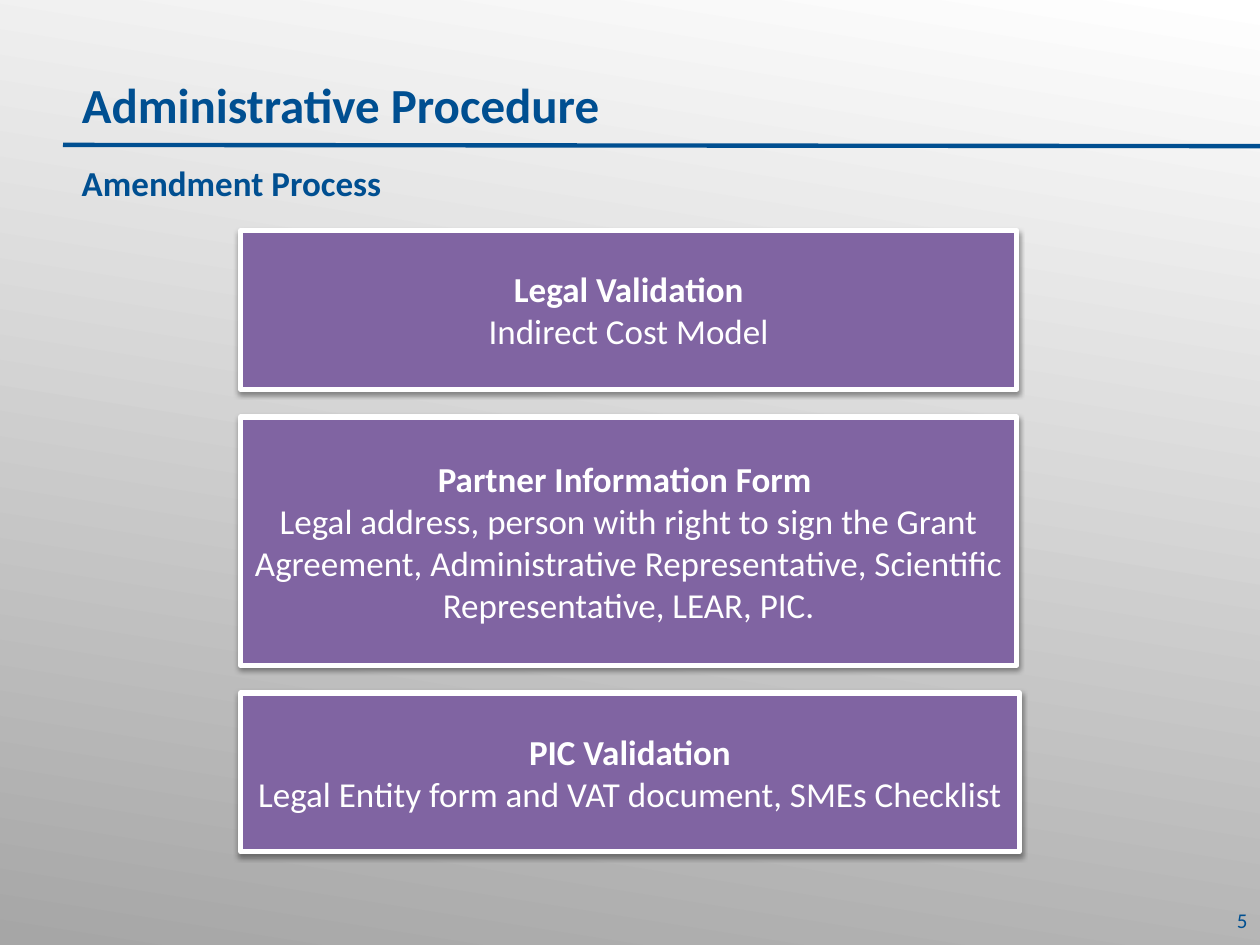
from lxml import etree
from pptx import Presentation
from pptx.dml.color import RGBColor
from pptx.enum.shapes import MSO_CONNECTOR, MSO_SHAPE
from pptx.enum.text import MSO_ANCHOR, PP_ALIGN
from pptx.oxml import parse_xml
from pptx.oxml.ns import nsdecls, qn
from pptx.util import Inches, Pt

RECTANGLE = MSO_SHAPE.RECTANGLE
STRAIGHT = MSO_CONNECTOR.STRAIGHT
TOP, MIDDLE = MSO_ANCHOR.TOP, MSO_ANCHOR.MIDDLE
LEFT, CENTER, RIGHT = PP_ALIGN.LEFT, PP_ALIGN.CENTER, PP_ALIGN.RIGHT

TITLE = "Administrative Procedure"
SUBTITLE = "Amendment Process"
PAGE_NUMBER = "5"
STEPS = [
    ("Legal Validation", "Indirect Cost Model", 6.16, 1.26),
    ("Partner Information Form ",
     "Legal address, person with right to sign the Grant Agreement, "
     "Administrative Representative, Scientific Representative, LEAR, PIC.", 6.16, 1.97),
    ("PIC Validation", "Legal Entity form and VAT document, SMEs Checklist", 6.18, 1.26),
]
STEP_LEFT, STEP_TOP, STEP_GAP = 1.91, 1.83, 0.22

THEME = {
    "font": "Calibri",
    "blue": RGBColor(0x00, 0x4F, 0x91),
    "purple": RGBColor(0x80, 0x64, 0xA2),
    "white": RGBColor(0xFF, 0xFF, 0xFF),
    "gray": RGBColor(0xA6, 0xA6, 0xA6),
    "title": 28,
    "body": 20,
    "number": 12,
}


def format_para(para, size, color, bold=False, align=LEFT):
    para.alignment = align
    para.font.name = THEME["font"]
    para.font.size = Pt(THEME[size])
    para.font.color.rgb = THEME[color]
    para.font.bold = bold


def place(shape, left, top, width, height):
    shape.left, shape.top = Inches(left), Inches(top)
    shape.width, shape.height = Inches(width), Inches(height)


def write_heading(box, text, size):
    frame = box.text_frame
    frame.word_wrap = True
    frame.vertical_anchor = TOP
    para = frame.paragraphs[0]
    para.text = text
    para.line_spacing = 0.9
    para.space_before = Pt(0)
    para.space_after = Pt(12)
    format_para(para, size, "blue", bold=True)


def add_shadow(shape):
    shape.shadow.inherit = False
    effects = shape.element.spPr.find(qn("a:effectLst"))
    effects.append(parse_xml(
        f'<a:outerShdw {nsdecls("a")} blurRad="{Pt(3.1)}" dist="{Pt(1.6)}" '
        'dir="5400000" rotWithShape="0"><a:srgbClr val="000000">'
        '<a:alpha val="38000"/></a:srgbClr></a:outerShdw>'))


def add_backdrop(page, deck):
    backdrop = page.shapes.add_shape(RECTANGLE, 0, 0, deck.slide_width, deck.slide_height)
    backdrop.shadow.inherit = False
    backdrop.line.fill.background()
    backdrop.fill.gradient()
    backdrop.fill.gradient_angle = 261
    for stop, color, position in zip(backdrop.fill.gradient_stops, ("white", "gray"), (0, 1)):
        stop.color.rgb = THEME[color]
        stop.position = position
    page.shapes.title.element.addprevious(backdrop.element)


def add_rule(page):
    rule = page.shapes.add_connector(
        STRAIGHT, Inches(0.5), Inches(1.15), Inches(10), Inches(1.16))
    rule.line.color.rgb = THEME["blue"]
    rule.line.width = Pt(2.5)
    etree.SubElement(rule.element.spPr, qn("a:effectLst"))
    page.shapes.title.element.addprevious(rule.element)


def add_step(page, top, heading, detail, width, height):
    box = page.shapes.add_shape(
        RECTANGLE, Inches(STEP_LEFT), Inches(top), Inches(width), Inches(height))
    box.fill.solid()
    box.fill.fore_color.rgb = THEME["purple"]
    box.line.color.rgb = THEME["white"]
    box.line.width = Pt(3)
    add_shadow(box)
    frame = box.text_frame
    frame.word_wrap = True
    frame.vertical_anchor = MIDDLE
    frame.paragraphs[0].text = heading
    frame.add_paragraph().text = detail
    for para, bold in zip(frame.paragraphs, (True, False)):
        format_para(para, "body", "white", bold, CENTER)


def main():
    deck = Presentation()
    deck.slide_width, deck.slide_height = Inches(10), Inches(7.5)
    page = deck.slides.add_slide(deck.slide_layouts[5])

    add_backdrop(page, deck)
    add_rule(page)
    title = page.shapes.title
    place(title, 0.55, 0.59, 9.04, 0.53)
    write_heading(title, TITLE, "title")

    number = page.shapes.add_textbox(Inches(7.67), Inches(7.1), Inches(2.33), Inches(0.4))
    number.text_frame.word_wrap = True
    number.text_frame.vertical_anchor = MIDDLE
    para = number.text_frame.paragraphs[0]
    para.text = PAGE_NUMBER
    format_para(para, "number", "blue", align=RIGHT)

    subtitle = page.shapes.add_textbox(Inches(0.55), Inches(1.27), Inches(9.19), Inches(0.4))
    write_heading(subtitle, SUBTITLE, "body")

    top = STEP_TOP
    for heading, detail, width, height in STEPS:
        add_step(page, top, heading, detail, width, height)
        top += height + STEP_GAP

    deck.save("out.pptx")


if __name__ == "__main__":
    main()
